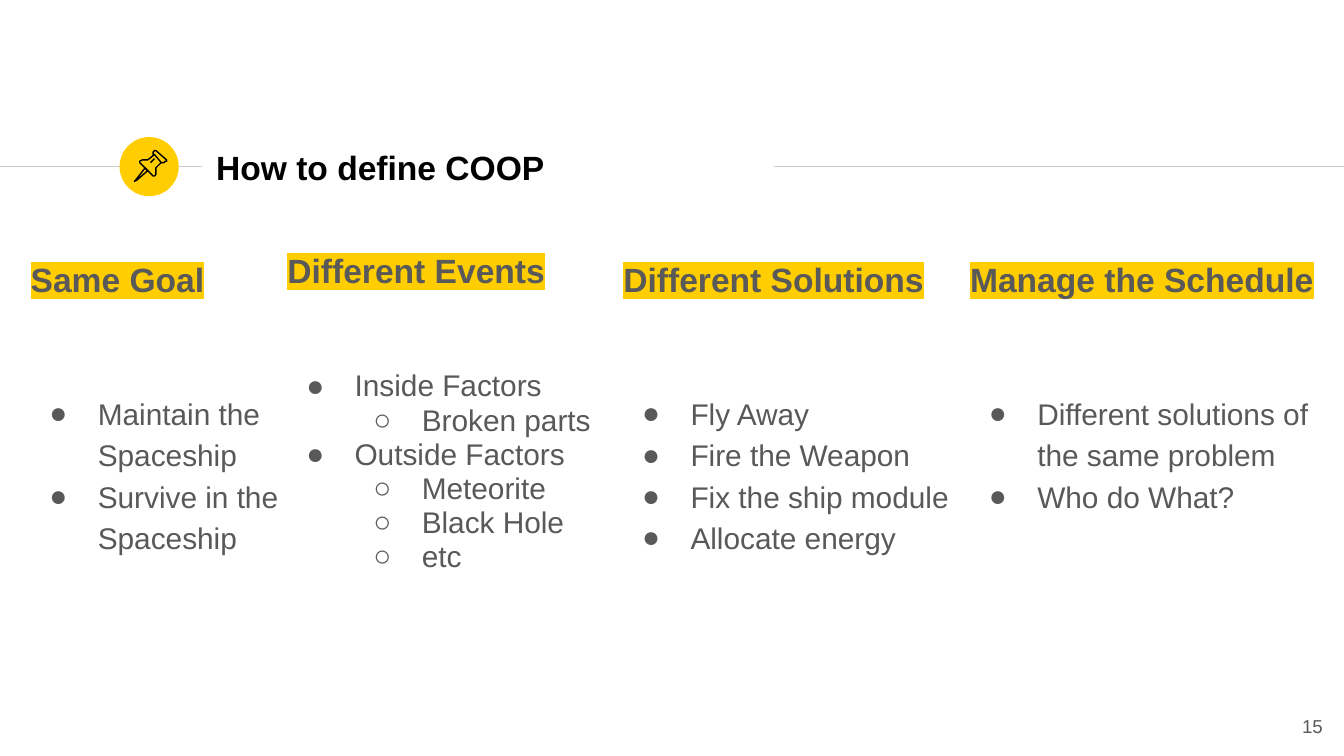
from pptx import Presentation
from pptx.dml.color import RGBColor
from pptx.enum.shapes import MSO_CONNECTOR, MSO_SHAPE
from pptx.enum.text import MSO_ANCHOR, PP_ALIGN
from pptx.oxml.ns import qn
from pptx.util import Inches, Pt
from lxml.etree import SubElement


def color(value):
    return RGBColor.from_string(value)


def add_text(p, text, size, value, bold=False):
    r = p.add_run()
    r.text = text
    fmt = {"name": "Arial", "size": Pt(size), "bold": bold}
    for key, val in fmt.items():
        setattr(r.font, key, val)
    r.font.color.rgb = color(value)
    return r


YELLOW, GRAY, BLACK = "FFCD00", "595959", "000000"

prs = Presentation()
prs.slide_width, prs.slide_height = Inches(10), Inches(10 * 9 / 16)
s = prs.slides.add_slide(prs.slide_layouts[6])

for x1, x2 in [(0, 1.5), (5.76, 10)]:
    line = s.shapes.add_connector(
        MSO_CONNECTOR.STRAIGHT, Inches(x1), Inches(1.24), Inches(x2), Inches(1.24))
    line.line.color.rgb = color("CCCCCC")
    line.line.width = Pt(0.75)
    SubElement(line.line._get_or_add_ln().getparent(), qn("a:effectLst"))

sp = s.shapes.add_shape(
    MSO_SHAPE.OVAL, Inches(0.89), Inches(1.02), Inches(0.44), Inches(0.44))
sp.shadow.inherit = False
sp.fill.solid()
sp.fill.fore_color.rgb = color(YELLOW)
sp.line.fill.background()

pin = [
    ([(1.08, 1.25), (1.01, 1.34), (1, 1.35), (1.02, 1.34), (1.1, 1.27)], True),
    ([(1.15, 1.15), (1.2, 1.21), (1.22, 1.21), (1.23, 1.2), (1.24, 1.2),
      (1.24, 1.19), (1.16, 1.12), (1.15, 1.12), (1.14, 1.13), (1.14, 1.15)], True),
    ([(1.15, 1.15), (1.1, 1.19), (1.08, 1.19), (1.06, 1.19), (1.04, 1.2),
      (1.04, 1.21), (1.14, 1.31), (1.15, 1.31), (1.16, 1.3), (1.16, 1.28),
      (1.16, 1.25), (1.2, 1.21)], False),
    ([(1.12, 1.21), (1.15, 1.18)], False),
]
for points, closed in pin:
    pts = [(Inches(x), Inches(y)) for x, y in points]
    fb = s.shapes.build_freeform(*pts[0])
    fb.add_line_segments(pts[1:], close=closed)
    sp = fb.convert_to_shape()
    sp.shadow.inherit = False
    sp.fill.background()
    sp.line.color.rgb = color(BLACK)
    sp.line.width = Pt(0.75)

columns = [
    (0.13, 2.1, 1.15, 49, "Same Goal",
     [(0, "Maintain the Spaceship"), (0, "Survive in the Spaceship")]),
    (2.04, 2.68, 0.95, 42.2, "Different Events",
     [(0, "Inside Factors"), (1, "Broken parts"), (0, "Outside Factors"),
      (1, "Meteorite"), (1, "Black Hole"), (1, "etc")]),
    (4.54, 2.83, 1.15, 49, "Different Solutions",
     [(0, "Fly Away"), (0, "Fire the Weapon"), (0, "Fix the ship module"),
      (0, "Allocate energy")]),
    (7.12, 2.83, 1.15, 49, "Manage the Schedule",
     [(0, "Different solutions of the same problem"), (0, "Who do What?")]),
]
boxes = [(1.51, 1, 6.48, 0.48), (9.34, 5.19, 0.6, 0.43)]
boxes += [(left, 1.78, width, 3.41) for left, width, *rest in columns]
frames = []
for box in boxes:
    tf = s.shapes.add_textbox(*[Inches(v) for v in box]).text_frame
    fmt = {"word_wrap": True, "margin_left": Inches(0.1), "margin_right": Inches(0.1),
           "margin_top": Inches(0.1), "margin_bottom": Inches(0.1)}
    for key, val in fmt.items():
        setattr(tf, key, val)
    frames.append(tf)

title, number, *bodies = frames
title.vertical_anchor = number.vertical_anchor = MSO_ANCHOR.MIDDLE
add_text(title.paragraphs[0], "How to define COOP", 18, BLACK, True)
number.paragraphs[0].alignment = PP_ALIGN.RIGHT
add_text(number.paragraphs[0], "15", 10, GRAY)

for tf, (left, width, spacing, gap, heading, items) in zip(bodies, columns):
    p = tf.paragraphs[0]
    p.line_spacing = spacing
    r = add_text(p, heading, 18, GRAY, True)
    hl = SubElement(r.font._element, qn("a:highlight"))
    SubElement(hl, qn("a:srgbClr"), val=YELLOW)
    r.font._element.find(qn("a:solidFill")).addnext(hl)
    for i, (level, text) in enumerate(items):
        p = tf.add_paragraph()
        fmt = {"level": level, "line_spacing": spacing,
               "space_before": Pt(0 if i else gap)}
        for key, val in fmt.items():
            setattr(p, key, val)
        pPr = p._p.get_or_add_pPr()
        pPr.set("marL", str(Inches(0.5 * (level + 1))))
        pPr.set("indent", str(Inches(-0.36)))
        SubElement(SubElement(pPr, qn("a:buClr")), qn("a:srgbClr"), val=GRAY)
        SubElement(pPr, qn("a:buFont"), typeface="Arial")
        SubElement(pPr, qn("a:buChar"), char="●○"[level])
        add_text(p, text, 16, GRAY)

prs.save("out.pptx")
